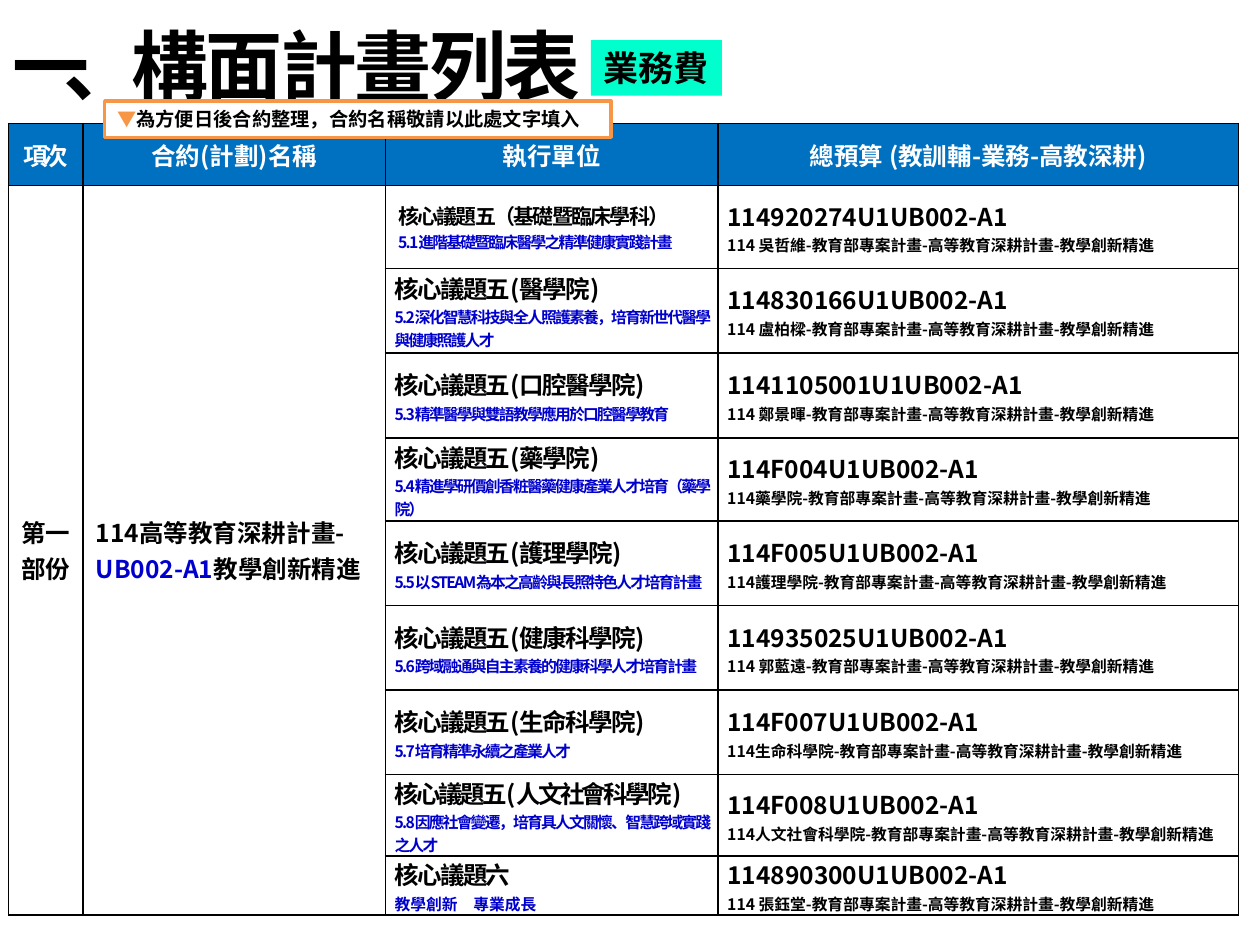
"""Build the slide that lists the sub-projects and their budgets."""
import pptx
import pptx.dml.color
import pptx.enum.shapes
import pptx.enum.text
import pptx.oxml.ns
import pptx.util
from lxml import etree

Pt = pptx.util.Pt
ALIGN = pptx.enum.text.PP_ALIGN
ANCHOR = pptx.enum.text.MSO_ANCHOR
SANS = "Noto Sans CJK SC"
BLACK, WHITE, BLUE, ORANGE = "000000", "FFFFFF", "0000CC", "F79646"
COLUMN_WIDTHS = [42.5, 172.8, 190.1, 297.4]
ROW_HEIGHTS = [35.3, 47.5, 48.3, 48.7, 47.5, 48.3, 48.3, 48.3, 46.1, 28.8]
WIDE_INSETS = (7.2, 3.6)
TIGHT_INSETS = (5.2, 0)
HEADERS = ["項次", "合約(計劃)名稱", "執行單位", "總預算 (教訓輔-業務-高教深耕)"]
BUDGET_SUFFIX = "-教育部專案計畫-高等教育深耕計畫-教學創新精進"
PROJECTS = [
    ("核心議題五（基礎暨臨床學科）", "5.1進階基礎暨臨床醫學之精準健康實踐計畫",
     "114920274U1UB002-A1", "114 吳哲維"),
    ("核心議題五(醫學院)", "5.2深化智慧科技與全人照護素養，培育新世代醫學與健康照護人才",
     "114830166U1UB002-A1", "114 盧柏樑"),
    ("核心議題五(口腔醫學院)", "5.3精準醫學與雙語教學應用於口腔醫學教育",
     "1141105001U1UB002-A1", "114 鄭景暉"),
    ("核心議題五(藥學院)", "5.4精進學研價創香粧醫藥健康產業人才培育（藥學院）",
     "114F004U1UB002-A1", "114藥學院"),
    ("核心議題五(護理學院)", "5.5以STEAM為本之高齡與長照特色人才培育計畫",
     "114F005U1UB002-A1", "114護理學院"),
    ("核心議題五(健康科學院)", "5.6跨域融通與自主素養的健康科學人才培育計畫",
     "114935025U1UB002-A1", "114 郭藍遠"),
    ("核心議題五(生命科學院)", "5.7培育精準永續之產業人才",
     "114F007U1UB002-A1", "114生命科學院"),
    ("核心議題五(人文社會科學院)", "5.8因應社會變遷，培育具人文關懷、智慧跨域實踐之人才",
     "114F008U1UB002-A1", "114人文社會科學院"),
    ("核心議題六", "教學創新　專業成長",
     "114890300U1UB002-A1", "114 張鈺堂"),
]


def rgb(value):
    return pptx.dml.color.RGBColor.from_string(value)


def add_text(para, text, size=14, color=BLACK, font=SANS, spacing=0):
    span = para.add_run()
    span.text = text
    span.font.size = Pt(size)
    span.font.bold = True
    span.font.color.rgb = rgb(color)
    span.font.name = font
    properties = span.font._element
    properties.set("spc", str(round(spacing * 100)))
    east_asian = etree.SubElement(properties, pptx.oxml.ns.qn("a:ea"))
    east_asian.set("typeface", SANS)


def add_box(page, left, top, width, height, fill, line=None):
    box = page.shapes.add_shape(pptx.enum.shapes.MSO_SHAPE.RECTANGLE,
                                Pt(left), Pt(top), Pt(width), Pt(height))
    box.shadow.inherit = False
    box.fill.solid()
    box.fill.fore_color.rgb = rgb(fill)
    if line:
        box.line.color.rgb = rgb(line)
        box.line.width = Pt(2)
    else:
        box.line.fill.background()
    frame = box.text_frame
    frame.auto_size = pptx.enum.text.MSO_AUTO_SIZE.SHAPE_TO_FIT_TEXT
    frame.vertical_anchor = ANCHOR.TOP
    frame.paragraphs[0].alignment = ALIGN.LEFT
    return frame


def add_title(page):
    box = page.shapes.add_textbox(Pt(0), Pt(-1.4), Pt(481.7), Pt(76.3))
    frame = box.text_frame
    frame.word_wrap = True
    frame.vertical_anchor = ANCHOR.MIDDLE
    para = frame.paragraphs[0]
    add_text(para, "一、 ", size=44, font="Times New Roman", spacing=-15)
    add_text(para, "構面計畫列表", size=44, font="Times New Roman", spacing=-1.5)


def style_cell(cell, fill=WHITE, insets=TIGHT_INSETS):
    properties = cell._tc.get_or_add_tcPr()
    for side in ("lnL", "lnR", "lnT", "lnB"):
        line = etree.SubElement(properties, pptx.oxml.ns.qn(f"a:{side}"), w=str(Pt(1)))
        paint = etree.SubElement(line, pptx.oxml.ns.qn("a:solidFill"))
        etree.SubElement(paint, pptx.oxml.ns.qn("a:srgbClr"), val=BLACK)
    cell.fill.solid()
    cell.fill.fore_color.rgb = rgb(fill)
    cell.margin_left = cell.margin_right = Pt(insets[0])
    cell.margin_top = cell.margin_bottom = Pt(insets[1])
    cell.vertical_anchor = ANCHOR.MIDDLE


def add_header(table):
    for column, label in enumerate(HEADERS):
        cell = table.cell(0, column)
        style_cell(cell, "0070C0", WIDE_INSETS)
        para = cell.text_frame.paragraphs[0]
        para.alignment = ALIGN.CENTER
        add_text(para, label, color=WHITE, spacing=0 if column else -3)


def add_contract(table):
    last_row = len(PROJECTS)
    for column in (0, 1):
        for row in range(1, last_row + 1):
            style_cell(table.cell(row, column), insets=WIDE_INSETS)
        table.cell(1, column).merge(table.cell(last_row, column))
    part = table.cell(1, 0).text_frame.paragraphs[0]
    part.alignment = ALIGN.CENTER
    add_text(part, "第一部份")
    name = table.cell(1, 1).text_frame.paragraphs[0]
    add_text(name, "114高等教育深耕計畫-")
    add_text(name, "UB002-A1", color=BLUE)
    add_text(name, "教學創新精進")


def add_project(table, row, project):
    unit, topic, code, owner = project
    first, last = row == 1, row == len(PROJECTS)
    unit_cell, budget_cell = table.cell(row, 2), table.cell(row, 3)
    style_cell(unit_cell, insets=WIDE_INSETS if first else TIGHT_INSETS)
    style_cell(budget_cell)
    unit_spacing = -1.5 if "人文" in unit else -1
    add_text(unit_cell.text_frame.paragraphs[0], unit,
             size=12 if first else 14, spacing=unit_spacing)
    add_text(unit_cell.text_frame.add_paragraph(), topic,
             size=9, color=BLUE, spacing=0 if last else -1)
    add_text(budget_cell.text_frame.paragraphs[0], code)
    add_text(budget_cell.text_frame.add_paragraph(), owner + BUDGET_SUFFIX, size=9)


def add_project_table(page):
    frame = page.shapes.add_table(len(ROW_HEIGHTS), len(COLUMN_WIDTHS), Pt(5), Pt(70.6),
                                  Pt(sum(COLUMN_WIDTHS)), Pt(sum(ROW_HEIGHTS)))
    table = frame.table
    for column, width in zip(table.columns, COLUMN_WIDTHS):
        column.width = Pt(width)
    for row, height in zip(table.rows, ROW_HEIGHTS):
        row.height = Pt(height)
    add_header(table)
    add_contract(table)
    for row, project in enumerate(PROJECTS, start=1):
        add_project(table, row, project)


def add_badge(page):
    frame = add_box(page, 337.7, 23, 74.9, 31.7, "00FFCC")
    frame.word_wrap = False
    add_text(frame.paragraphs[0], "業務費", size=20)


def add_callout(page):
    frame = add_box(page, 59.8, 57.6, 289.4, 20.9, WHITE, line=ORANGE)
    frame.word_wrap = True
    add_text(frame.paragraphs[0], "▼", size=11, color=ORANGE)
    add_text(frame.paragraphs[0], "為方便日後合約整理，合約名稱敬請以此處文字填入", size=11)


def main():
    deck = pptx.Presentation()
    deck.slide_width, deck.slide_height = Pt(720), Pt(540)
    page = deck.slides.add_slide(deck.slide_layouts[6])
    add_project_table(page)
    add_title(page)
    add_badge(page)
    add_callout(page)
    deck.save("out.pptx")


if __name__ == "__main__":
    main()
